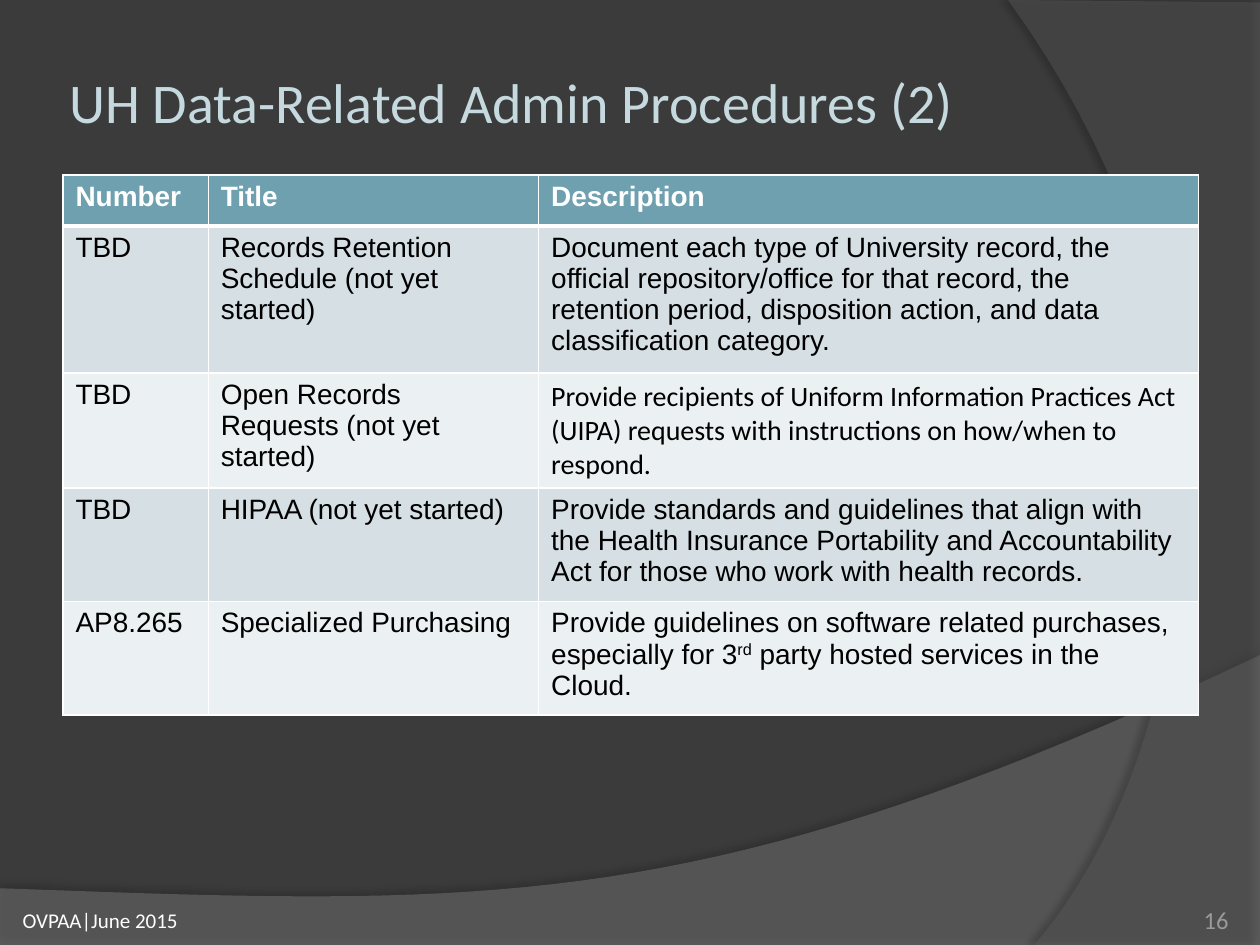
from dataclasses import dataclass

from lxml import etree
from pptx import Presentation
from pptx.dml.color import RGBColor
from pptx.enum.text import MSO_ANCHOR, PP_ALIGN
from pptx.oxml.ns import qn
from pptx.util import Pt

MIDDLE, BOTTOM = MSO_ANCHOR.MIDDLE, MSO_ANCHOR.BOTTOM
LEFT, RIGHT = PP_ALIGN.LEFT, PP_ALIGN.RIGHT

WHITE = RGBColor(0xFF, 0xFF, 0xFF)
BLACK = RGBColor(0x00, 0x00, 0x00)
CHARCOAL = RGBColor(0x3B, 0x3B, 0x3B)
WAVE_GRAY = RGBColor(0x7F, 0x7F, 0x7F)
ARC_GRAY = RGBColor(0x5E, 0x5E, 0x5E)
PALE_TEAL = RGBColor(0xC5, 0xD9, 0xDF)
NUMBER_GRAY = RGBColor(0x9B, 0x9A, 0x98)
HEADER_TEAL = RGBColor(0x6E, 0xA0, 0xB0)
BANDS = (RGBColor(0xD5, 0xDF, 0xE4), RGBColor(0xEB, 0xF0, 0xF2))

HEADING_FONT, BODY_FONT = "Calibri", "Arial"
CURVE_STEPS = 40
COLUMN_WIDTHS = (83, 188.8, 377.2)
ROW_HEIGHTS = (29.2, 77.8, 65.7, 60.5, 60.5)
ROWS = (
    ("Number", "Title", "Description"),
    ("TBD", "Records Retention Schedule (not yet started)",
     "Document each type of University record, the official repository/office for that "
     "record, the retention period, disposition action, and data classification category."),
    ("TBD", "Open Records Requests (not yet started)",
     "Provide recipients of Uniform Information Practices Act (UIPA) requests with "
     "instructions on how/when to respond."),
    ("TBD", "HIPAA (not yet started)",
     "Provide standards and guidelines that align with the Health Insurance Portability "
     "and Accountability Act for those who work with health records."),
    ("AP8.265", "Specialized Purchasing",
     ("Provide guidelines on software related purchases, especially for 3", "rd",
      " party hosted services in the Cloud.")),
)
CALIBRI_CELL = (2, 2)

Point = tuple[float, float]


@dataclass(frozen=True)
class Swoosh:
    """A translucent sheet: one Bezier edge closed by straight corners."""
    curve: tuple[Point, Point, Point, Point]
    corners: tuple[Point, ...]
    color: RGBColor
    opacity: int
    shadow_opacity: int
    shadow_distance: float
    shadow_angle: int


@dataclass(frozen=True)
class Label:
    text: str
    box: tuple[float, float, float, float]
    size: float
    color: RGBColor
    anchor: MSO_ANCHOR
    align: PP_ALIGN = LEFT
    margins: tuple[float, float] = (7.2, 3.6)


SWOOSHES = (
    Swoosh(((720, 374.4), (402.5, 524.9), (281.5, 517.7), (0, 507.6)),
           ((0, 540), (720, 540)), WAVE_GRAY, 45, 35, 3.5, 270),
    Swoosh(((591, 540), (673.2, 445.7), (733, 216), (576, 0)),
           ((720, 1.4), (720, 540)), ARC_GRAY, 40, 45, 4, 180),
)
LABELS = (
    Label("OVPAA|June 2015", (5.8, 511.2, 167.8, 28.8), 12, WHITE, MIDDLE),
    Label("UH Data-Related Admin Procedures (2)", (36, 21.6, 588.2, 72.7), 32,
          PALE_TEAL, MIDDLE, margins=(3.6, 3.6)),
    Label("16", (642.2, 505.4, 59.8, 28.8), 14, NUMBER_GRAY, BOTTOM, RIGHT, (0, 0)),
)


def bezier_point(curve: tuple[Point, ...], t: float) -> Point:
    weights = ((1 - t) ** 3, 3 * t * (1 - t) ** 2, 3 * t * t * (1 - t), t ** 3)
    x, y = (sum(w * p[axis] for w, p in zip(weights, curve)) for axis in (0, 1))
    return x, y


def add_color(parent, color: RGBColor, opacity: int = 100) -> None:
    node = etree.SubElement(parent, qn("a:srgbClr"), val=str(color))
    etree.SubElement(node, qn("a:alpha"), val=str(opacity * 1000))


def draw_swoosh(shapes, swoosh: Swoosh) -> None:
    edge = [bezier_point(swoosh.curve, i / CURVE_STEPS) for i in range(CURVE_STEPS + 1)]
    points = [(Pt(x), Pt(y)) for x, y in (*edge, *swoosh.corners)]
    builder = shapes.build_freeform(*points[0])
    builder.add_line_segments(points[1:], close=True)
    sheet = builder.convert_to_shape()
    sheet.line.fill.background()
    sheet.fill.solid()
    sheet.fill.fore_color.rgb = swoosh.color
    properties = sheet._element.spPr
    fill_color = properties.find(qn("a:solidFill")).find(qn("a:srgbClr"))
    etree.SubElement(fill_color, qn("a:alpha"), val=str(swoosh.opacity * 1000))
    sheet.shadow.inherit = False
    shadow = etree.SubElement(
        properties.find(qn("a:effectLst")), qn("a:outerShdw"), blurRad=str(Pt(4)),
        dist=str(Pt(swoosh.shadow_distance)), dir=str(swoosh.shadow_angle * 60000))
    add_color(shadow, BLACK, swoosh.shadow_opacity)


def format_run(run, font: str, size: float, color: RGBColor, bold: bool = False) -> None:
    run.font.name, run.font.size, run.font.bold = font, Pt(size), bold
    run.font.color.rgb = color


def draw_label(shapes, label: Label) -> None:
    frame = shapes.add_textbox(*map(Pt, label.box)).text_frame
    frame.word_wrap = True
    frame.vertical_anchor = label.anchor
    side, end = map(Pt, label.margins)
    frame.margin_left = frame.margin_right = side
    frame.margin_top = frame.margin_bottom = end
    frame.text = label.text
    paragraph = frame.paragraphs[0]
    paragraph.alignment = label.align
    format_run(paragraph.runs[0], HEADING_FONT, label.size, label.color)


def set_borders(cell, top: float, bottom: float) -> None:
    """Draw white borders; they must precede the cell fill in the XML."""
    properties = cell._tc.get_or_add_tcPr()
    for i, (side, width) in enumerate(zip("LRTB", (1, 1, top, bottom))):
        line = etree.Element(qn(f"a:ln{side}"), w=str(Pt(width)))
        add_color(etree.SubElement(line, qn("a:solidFill")), WHITE)
        properties.insert(i, line)


def fill_cell(cell, content: str | tuple[str, ...], row: int, column: int) -> None:
    header = row == 0
    cell.fill.solid()
    cell.fill.fore_color.rgb = HEADER_TEAL if header else BANDS[(row - 1) % 2]
    set_borders(cell, top=3 if row == 1 else 1, bottom=3 if header else 1)
    paragraph = cell.text_frame.paragraphs[0]
    font = HEADING_FONT if (row, column) == CALIBRI_CELL else BODY_FONT
    for part in (content,) if isinstance(content, str) else content:
        run = paragraph.add_run()
        run.text = part
        format_run(run, font, 16, WHITE if header else BLACK, header)
        if part == "rd":
            run._r.get_or_add_rPr().set("baseline", "30000")


def draw_procedures(shapes) -> None:
    table = shapes.add_table(len(ROWS), len(COLUMN_WIDTHS), Pt(36), Pt(100),
                             Pt(sum(COLUMN_WIDTHS)), Pt(sum(ROW_HEIGHTS))).table
    for column, width in zip(table.columns, COLUMN_WIDTHS):
        column.width = Pt(width)
    for r, (height, contents) in enumerate(zip(ROW_HEIGHTS, ROWS)):
        table.rows[r].height = Pt(height)
        for c, content in enumerate(contents):
            fill_cell(table.cell(r, c), content, r, c)


def main() -> None:
    deck = Presentation()
    deck.slide_width, deck.slide_height = Pt(720), Pt(540)
    slide = deck.slides.add_slide(deck.slide_layouts[6])
    slide.background.fill.solid()
    slide.background.fill.fore_color.rgb = CHARCOAL
    for swoosh in SWOOSHES:
        draw_swoosh(slide.shapes, swoosh)
    for label in LABELS:
        draw_label(slide.shapes, label)
    draw_procedures(slide.shapes)
    deck.save("out.pptx")


if __name__ == "__main__":
    main()
